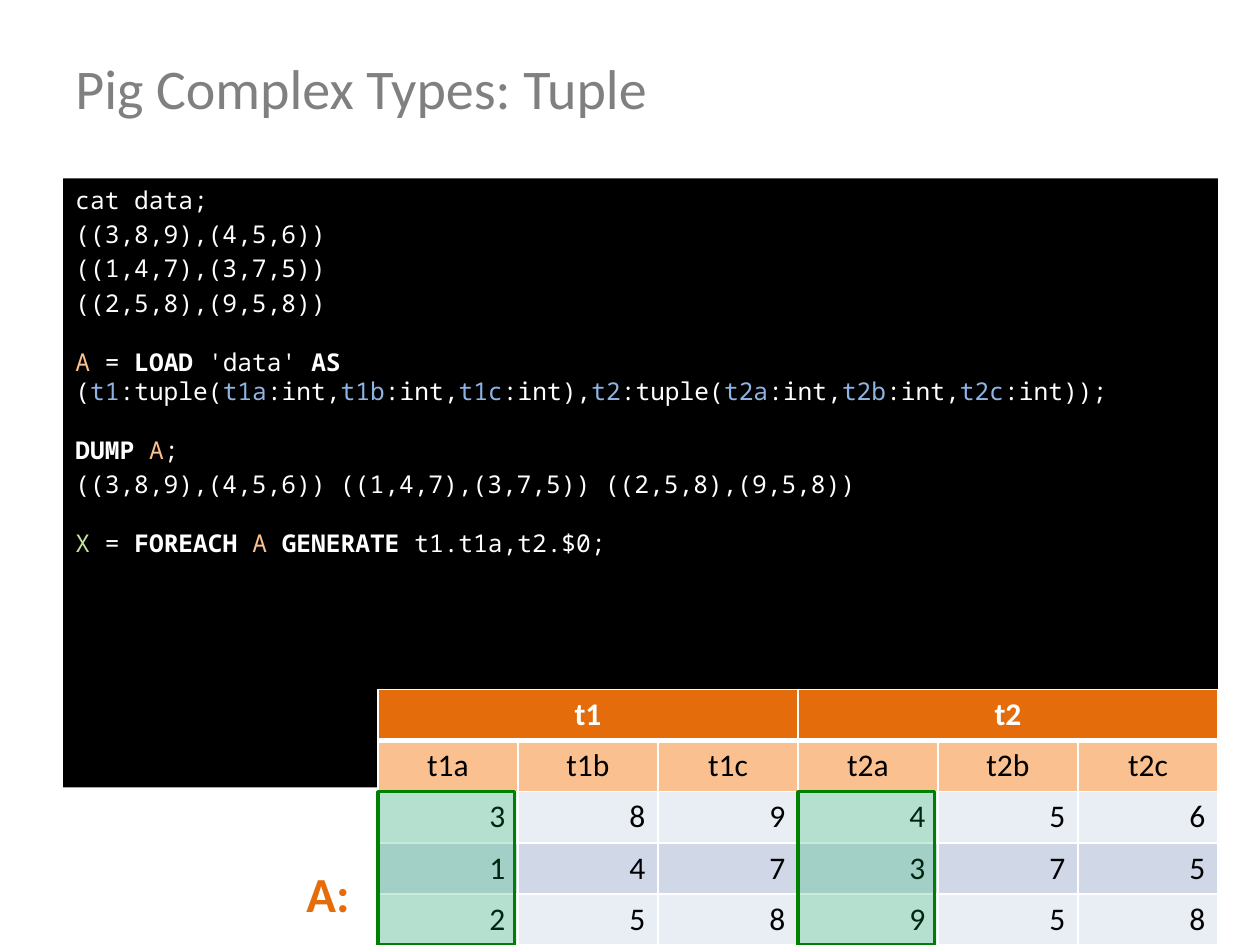
from lxml.etree import SubElement
from pptx import Presentation
from pptx.dml.color import RGBColor
from pptx.enum.shapes import MSO_SHAPE
from pptx.enum.text import MSO_ANCHOR, PP_ALIGN
from pptx.oxml.ns import qn
from pptx.util import Pt

WHITE = RGBColor(0xFF, 0xFF, 0xFF)
BLACK = RGBColor(0, 0, 0)
GRAY = RGBColor(0x80, 0x80, 0x80)
ORANGE = RGBColor(0xE4, 0x6C, 0x0A)
PEACH = RGBColor(0xFA, 0xC0, 0x90)
SKY = RGBColor(0x8E, 0xB4, 0xE3)
LIME = RGBColor(0xC2, 0xE4, 0x9C)
BAND_LIGHT = RGBColor(0xE9, 0xED, 0xF4)
BAND_DARK = RGBColor(0xD0, 0xD8, 0xE8)
GREEN = RGBColor(0, 0xB0, 0x50)
DARK_GREEN = RGBColor(0, 0x80, 0)

SCHEMA = {"t1": ["t1a", "t1b", "t1c"], "t2": ["t2a", "t2b", "t2c"]}
TUPLES = [[3, 8, 9, 4, 5, 6], [1, 4, 7, 3, 7, 5], [2, 5, 8, 9, 5, 8]]
LINE_GAP, BLOCK_GAP = 2.8, 16.8


def style(run, size, color, bold=False, face="Calibri"):
    run.font.name, run.font.size = face, Pt(size)
    run.font.color.rgb, run.font.bold = color, bold


def add_label(slide, box, text, size, color, bold=False):
    frame = slide.shapes.add_textbox(*map(Pt, box)).text_frame
    frame.word_wrap = True
    frame.text = text
    style(frame.paragraphs[0].runs[0], size, color, bold)
    return frame


def add_rectangle(slide, box, fill):
    rectangle = slide.shapes.add_shape(MSO_SHAPE.RECTANGLE, *map(Pt, box))
    rectangle.shadow.inherit = False
    rectangle.fill.solid()
    rectangle.fill.fore_color.rgb = fill
    return rectangle


def plain(text):
    return (text, WHITE, False)


def keyword(text):
    return (text, WHITE, True)


def schema_runs():
    """Runs of the tuple declaration, with the field names in blue."""
    runs = [plain(" (")]
    for i, (name, fields) in enumerate(SCHEMA.items()):
        runs += [(name, SKY, False), plain(":tuple(")]
        for field in fields:
            if field != fields[-1]:
                ending = ":int,"
            else:
                ending = ":int)," if i == 0 else ":int));"
            runs += [(field, SKY, False), plain(ending)]
    return runs


def add_code(slide, box):
    records = ["((%d,%d,%d),(%d,%d,%d))" % tuple(row) for row in TUPLES]
    relation = ("A", PEACH, False)
    blocks = [
        [[plain(line)] for line in ["cat data;", *records]],
        [[relation, plain(" = "), keyword("LOAD"), plain(" 'data' "),
          keyword("AS"), *schema_runs()]],
        [[keyword("DUMP "), relation, plain(";")], [plain(" ".join(records))]],
        [[("X", LIME, False), plain(" = "), keyword("FOREACH "),
          ("A ", PEACH, False), keyword("GENERATE"),
          plain(" t1.t1a,t2.$0;")]],
    ]
    panel = add_rectangle(slide, box, BLACK)
    panel.line.fill.background()
    frame = panel.text_frame
    frame.word_wrap = True
    frame.vertical_anchor = MSO_ANCHOR.TOP
    for b, block in enumerate(blocks):
        for n, line in enumerate(block):
            first = b == n == 0
            paragraph = frame.paragraphs[0] if first else frame.add_paragraph()
            paragraph.alignment = PP_ALIGN.LEFT
            paragraph.space_before = Pt(BLOCK_GAP if b and n == 0 else LINE_GAP)
            for text, color, bold in line:
                run = paragraph.add_run()
                run.text = text
                style(run, 14, color, bold, "Noto Sans Mono")


def set_cell(cell, text, fill, align, color=BLACK, bold=False, bottom=1):
    cell.text = text
    paragraph = cell.text_frame.paragraphs[0]
    paragraph.alignment = align
    for run in paragraph.runs:
        style(run, 18, color, bold)
    # Borders come before the fill in the cell properties
    properties = cell._tc.get_or_add_tcPr()
    for side, width in (("L", 1), ("R", 1), ("T", 1), ("B", bottom)):
        border = SubElement(properties, qn("a:ln" + side), w=str(Pt(width)))
        solid = SubElement(border, qn("a:solidFill"))
        SubElement(solid, qn("a:srgbClr"), val=str(WHITE))
    cell.fill.solid()
    cell.fill.fore_color.rgb = fill


def add_relation(slide, box):
    left, top, width, height = box
    fields = [field for names in SCHEMA.values() for field in names]
    row_count = 2 + len(TUPLES)
    column_width, row_height = width / len(fields), height / row_count
    table = slide.shapes.add_table(row_count, len(fields), *map(Pt, box)).table
    for column in table.columns:
        column.width = Pt(column_width)
    for row in table.rows:
        row.height = Pt(row_height)

    # Tuple names over their fields
    for c in range(len(fields)):
        name = list(SCHEMA)[c // 3] if c % 3 == 0 else ""
        set_cell(table.cell(0, c), name, ORANGE, PP_ALIGN.CENTER, WHITE, True, 3)
        set_cell(table.cell(1, c), fields[c], PEACH, PP_ALIGN.CENTER)
    for c in (0, 3):
        table.cell(0, c).merge(table.cell(0, c + 2))

    # Banded data rows
    for r, values in enumerate(TUPLES):
        band = BAND_DARK if r % 2 else BAND_LIGHT
        for c, value in enumerate(values):
            set_cell(table.cell(r + 2, c), str(value), band, PP_ALIGN.RIGHT)

    add_label(slide, (left - 48, top + 96, 228, 41), "A:", 28, ORANGE, True)

    # Selected columns t1.t1a and t2.$0
    for c in (0, 3):
        selection = add_rectangle(
            slide, (left + c * column_width, top + 2 * row_height,
                    column_width - 2, 3 * row_height), GREEN)
        selection.line.color.rgb = DARK_GREEN
        selection.line.width = Pt(2)
        tint = selection.fill._xPr.find(".//" + qn("a:srgbClr"))
        SubElement(tint, qn("a:alpha"), val="22000")


def main():
    deck = Presentation()
    deck.slide_width, deck.slide_height = Pt(720), Pt(540)
    slide = deck.slides.add_slide(deck.slide_layouts[6])
    add_code(slide, (36, 102, 660, 348))
    title = add_label(slide, (36, 21.6, 648, 56), "Pig Complex Types: Tuple",
                      32, GRAY)
    title.vertical_anchor = MSO_ANCHOR.MIDDLE
    add_relation(slide, (216, 394, 480, 146))
    deck.save("out.pptx")


if __name__ == "__main__":
    main()
